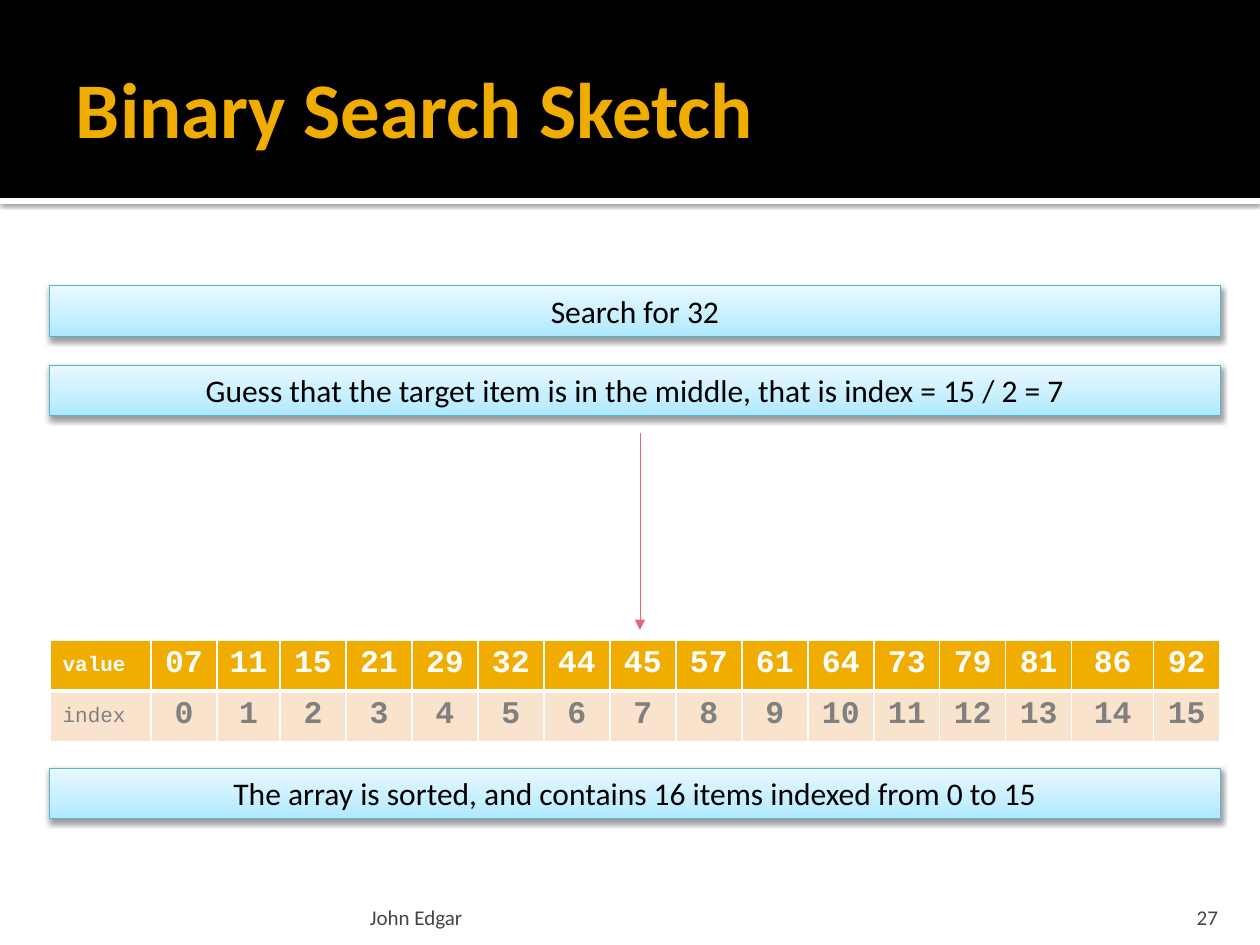
from pptx import Presentation
from pptx.dml.color import RGBColor
from pptx.enum.shapes import MSO_CONNECTOR, MSO_SHAPE
from pptx.enum.text import MSO_ANCHOR, PP_ALIGN
from pptx.oxml import parse_xml
from pptx.oxml.ns import nsdecls
from pptx.util import Pt

LEFT, CENTER, RIGHT = PP_ALIGN.LEFT, PP_ALIGN.CENTER, PP_ALIGN.RIGHT
TOP, MIDDLE, BOTTOM = MSO_ANCHOR.TOP, MSO_ANCHOR.MIDDLE, MSO_ANCHOR.BOTTOM
RECTANGLE, STRAIGHT = MSO_SHAPE.RECTANGLE, MSO_CONNECTOR.STRAIGHT

EMU_PER_PX = 914400 / 126
SLIDE_SIZE = (1260, 945)
BODY_FONT, ARRAY_FONT = "Calibri", "Courier New"

# text, (left, top, width, height), (left, top, right, bottom) insets, format
TEXTS = [
    ("Binary Search Sketch", (63, 21, 1134, 173), (13, 6, 6, 6),
     dict(size=45, color="F0AD00", bold=True), MIDDLE),
    ("John Edgar", (364, 892, 759, 38), (6, 6, 6, 0),
     dict(size=12, color="454545"), BOTTOM),
    ("27", (1130, 892, 101, 38), (13, 6, 13, 0),
     dict(size=12, color="454545", align=RIGHT), BOTTOM),
]

BANNER_LEFT, BANNER_WIDTH, BANNER_HEIGHT = 49, 1172, 51
BANNERS = [
    ("Search for 32", 286),
    ("Guess that the target item is in the middle, that is index = 15 / 2 = 7", 365),
    ("The array is sorted, and contains 16 items indexed from 0 to 15", 768),
]
BANNER_STOPS = [(0, "ADE9FF"), (35, "C5EFFF"), (100, "E9F9FF")]

VALUES = ["07", "11", "15", "21", "29", "32", "44", "45",
          "57", "61", "64", "73", "79", "81", "86", "92"]
INDEXES = [str(index) for index in range(len(VALUES))]
# label, entries, fill, text colour, bold label, top and bottom border in points
ROWS = [
    ("value", VALUES, "F0AD00", "FFFFFF", True, 1, 3),
    ("index", INDEXES, "F9E3CC", "808080", False, 3, 1),
]
TABLE_LEFT, TABLE_TOP, ROW_HEIGHT = 50, 640, 51
COLUMN_WIDTHS = [101, 66, 63] + [66] * 12 + [82, 66]

ARROW_X, ARROW_TOP, ARROW_BOTTOM = 640, 433, 630


def px(length):
    return round(length * EMU_PER_PX)


def rgb(value):
    return RGBColor.from_string(value)


def xml(markup):
    """Parse one drawing element, adding the namespace to its opening tag."""
    name, rest = markup[1:].split(" ", 1)
    return parse_xml(f"<{name} {nsdecls('a')} {rest}")


def write(text_frame, text, size, color, font=BODY_FONT, bold=False, align=LEFT):
    text_frame.text = text
    paragraph = text_frame.paragraphs[0]
    paragraph.alignment = align
    run_font = paragraph.runs[0].font
    run_font.size, run_font.name, run_font.bold = Pt(size), font, bold
    run_font.color.rgb = rgb(color)


def add_text(slide, text, box, insets, style, anchor):
    text_frame = slide.shapes.add_textbox(*map(px, box)).text_frame
    text_frame.word_wrap = True
    text_frame.vertical_anchor = anchor
    (text_frame.margin_left, text_frame.margin_top,
     text_frame.margin_right, text_frame.margin_bottom) = map(px, insets)
    write(text_frame, text, **style)


def add_rectangle(slide, box, fill):
    shape = slide.shapes.add_shape(RECTANGLE, *map(px, box))
    shape.shadow.inherit = False
    shape.fill.solid()
    shape.fill.fore_color.rgb = rgb(fill)
    shape.line.fill.background()
    return shape


def add_shadow(shape, opacity, blur, distance):
    """Cast a black shadow straight down; blur and distance are in points."""
    shape._element.spPr.effectLst.append(xml(
        f'<a:outerShdw blurRad="{Pt(blur)}" dist="{Pt(distance)}" dir="5400000" '
        f'rotWithShape="0"><a:srgbClr val="000000">'
        f'<a:alpha val="{opacity * 1000}"/></a:srgbClr></a:outerShdw>'))


def add_banner(slide, text, top):
    box = (BANNER_LEFT, top, BANNER_WIDTH, BANNER_HEIGHT)
    shape = add_rectangle(slide, box, BANNER_STOPS[0][1])
    stops = "".join(f'<a:gs pos="{position * 1000}"><a:srgbClr val="{color}"/></a:gs>'
                    for position, color in BANNER_STOPS)
    properties = shape._element.spPr
    properties.replace(properties.eg_fillProperties, xml(
        f'<a:gradFill rotWithShape="1"><a:gsLst>{stops}</a:gsLst>'
        f'<a:lin ang="16200000" scaled="0"/></a:gradFill>'))
    shape.line.color.rgb = rgb("5BB3CA")
    shape.line.width = Pt(0.5)
    add_shadow(shape, 38, 3.5, 2)
    shape.text_frame.word_wrap = True
    shape.text_frame.vertical_anchor = TOP
    write(shape.text_frame, text, 18, "000000", align=CENTER)


def set_borders(cell, top, bottom):
    widths = [("lnL", 1), ("lnR", 1), ("lnT", top), ("lnB", bottom)]
    for position, (side, width) in enumerate(widths):
        cell._tc.get_or_add_tcPr().insert(position, xml(
            f'<a:{side} w="{Pt(width)}"><a:solidFill><a:srgbClr val="FFFFFF"/>'
            f'</a:solidFill></a:{side}>'))


def add_array_table(slide):
    box = (TABLE_LEFT, TABLE_TOP, sum(COLUMN_WIDTHS), ROW_HEIGHT * len(ROWS))
    table = slide.shapes.add_table(
        len(ROWS), len(COLUMN_WIDTHS), *map(px, box)).table
    for column, width in zip(table.columns, COLUMN_WIDTHS):
        column.width = px(width)
    for row, content in zip(table.rows, ROWS):
        label, entries, fill, color, bold_label, top, bottom = content
        row.height = px(ROW_HEIGHT)
        for number, (cell, text) in enumerate(zip(row.cells, [label] + entries)):
            cell.fill.solid()
            cell.fill.fore_color.rgb = rgb(fill)
            set_borders(cell, top, bottom)
            if number == 0:
                cell.vertical_anchor = MIDDLE
                write(cell.text_frame, text, 12, color, ARRAY_FONT, bold_label)
            else:
                cell.margin_left = cell.margin_right = px(5)
                write(cell.text_frame, text, 18, color, ARRAY_FONT, True, CENTER)


def add_arrow(slide):
    arrow = slide.shapes.add_connector(
        STRAIGHT, *map(px, (ARROW_X, ARROW_TOP, ARROW_X, ARROW_BOTTOM)))
    arrow.line.color.rgb = rgb("E46778")
    arrow.line.width = Pt(0.5)
    arrow.line._get_or_add_ln().append(xml('<a:tailEnd type="triangle"/>'))
    arrow._element.spPr.append(xml("<a:effectLst />"))


def main():
    presentation = Presentation()
    presentation.slide_width, presentation.slide_height = map(px, SLIDE_SIZE)
    slide = presentation.slides.add_slide(presentation.slide_layouts[6])

    header_rule = add_rectangle(slide, (0, 198, 1260, 6), "FFFFFF")
    add_shadow(header_rule, 60, 2.5, 0.8)
    add_rectangle(slide, (0, 0, 1260, 198), "000000")
    for text in TEXTS:
        add_text(slide, *text)
    for banner in BANNERS:
        add_banner(slide, *banner)
    add_array_table(slide)
    add_arrow(slide)
    presentation.save("out.pptx")


if __name__ == "__main__":
    main()
